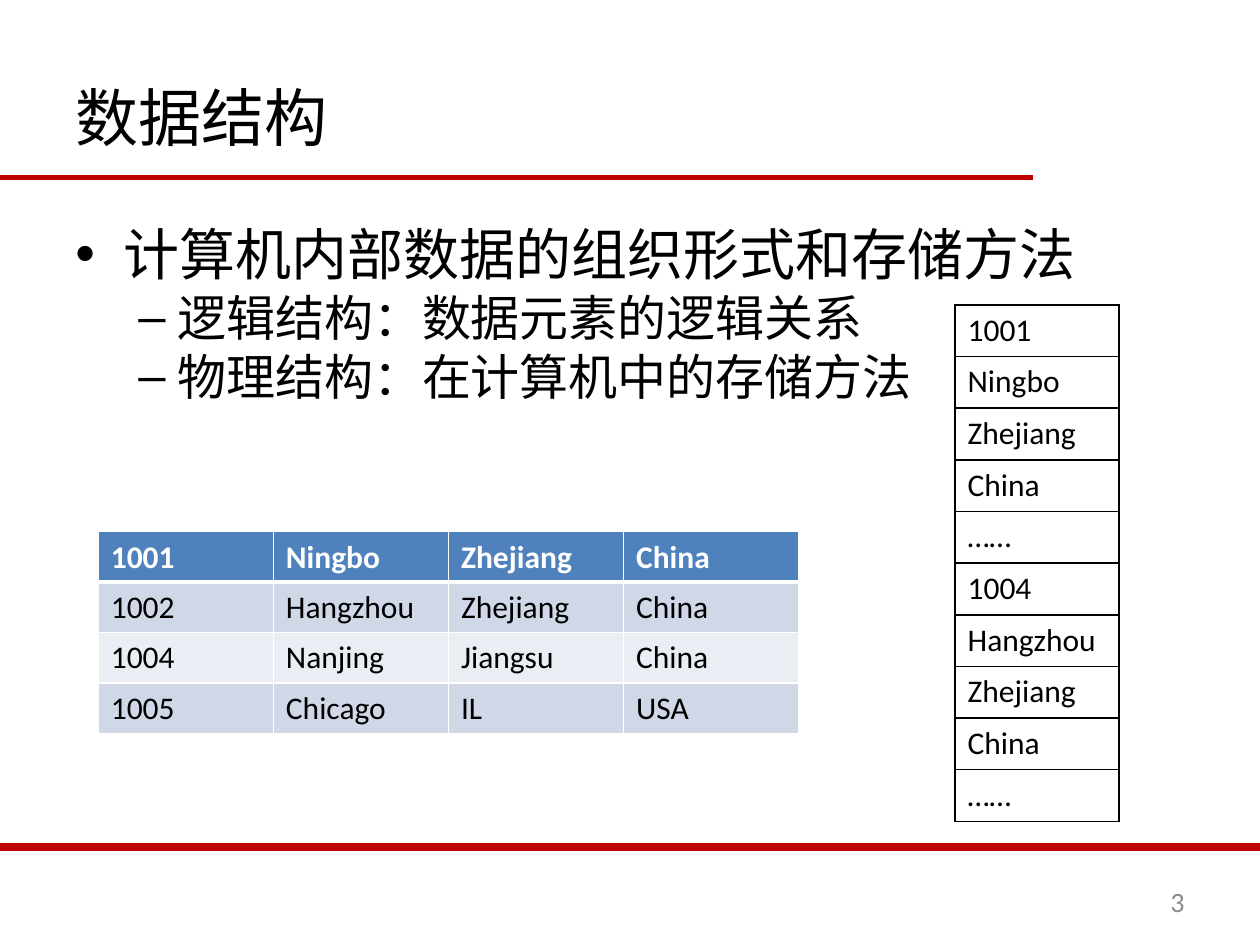
from dataclasses import dataclass

from lxml import etree
from pptx import Presentation
from pptx.dml.color import RGBColor
from pptx.enum.shapes import MSO_CONNECTOR
from pptx.enum.text import MSO_ANCHOR, PP_ALIGN
from pptx.oxml.ns import qn
from pptx.util import Inches, Pt

STRAIGHT = MSO_CONNECTOR.STRAIGHT
TOP, MIDDLE = MSO_ANCHOR.TOP, MSO_ANCHOR.MIDDLE
LEFT, RIGHT = PP_ALIGN.LEFT, PP_ALIGN.RIGHT


@dataclass(frozen=True)
class Theme:
    latin: str = "Calibri"
    cjk: str = "Noto Sans CJK SC"
    black: str = "000000"
    white: str = "FFFFFF"
    red: str = "C00000"
    grey: str = "8C8C8C"
    header: str = "4F81BD"
    bands: tuple = ("D0D8E8", "E9EDF4")
    title: int = 36
    levels: tuple = (32, 28)
    cell: int = 18
    number: int = 16


T = Theme()

# Bullet character, left margin and hanging indent for each level
BULLETS = (("•", 0.38, -0.38), ("–", 0.81, -0.31))
CJK_SPACING = 0.84

BODY = (
    (0, "计算机内部数据的组织形式和存储方法"),
    (1, "逻辑结构：数据元素的逻辑关系"),
    (1, "物理结构：在计算机中的存储方法"),
)
RECORDS = (
    ("1001", "Ningbo", "Zhejiang", "China"),
    ("1002", "Hangzhou", "Zhejiang", "China"),
    ("1004", "Nanjing", "Jiangsu", "China"),
    ("1005", "Chicago", "IL", "USA"),
)
MEMORY = ("1001", "Ningbo", "Zhejiang", "China", "……",
          "1004", "Hangzhou", "Zhejiang", "China", "……")


def add_run(p, text, size, color, font=T.latin, bold=False):
    r = p.add_run()
    r.text = text
    r.font.size = Pt(size)
    r.font.bold = bold
    r.font.color.rgb = RGBColor.from_string(color)
    r.font.name = font
    ea = etree.SubElement(r.font._element, qn("a:ea"))
    ea.set("typeface", T.cjk)


def add_text_box(s, x, y, w, h, anchor=TOP):
    tf = s.shapes.add_textbox(Inches(x), Inches(y), Inches(w), Inches(h)).text_frame
    tf.word_wrap = True
    tf.vertical_anchor = anchor
    return tf


def add_rule(s, y, length, width):
    line = s.shapes.add_connector(STRAIGHT, 0, Inches(y), Inches(length), Inches(y))
    line.line.color.rgb = RGBColor.from_string(T.red)
    line.line.width = Pt(width)
    etree.SubElement(line._element.spPr, qn("a:effectLst"))


def set_bullet(p, level):
    char, margin, indent = BULLETS[level]
    p.level = level
    pPr = p._p.get_or_add_pPr()
    pPr.set("marL", str(Inches(margin)))
    pPr.set("indent", str(Inches(indent)))
    etree.SubElement(pPr, qn("a:buFont")).set("typeface", "Arial")
    etree.SubElement(pPr, qn("a:buChar")).set("char", char)


def add_bullets(s, items):
    tf = add_text_box(s, 0.5, 1.78, 9, 4.92)
    for i, (level, text) in enumerate(items):
        p = tf.add_paragraph() if i else tf.paragraphs[0]
        size = T.levels[level]
        set_bullet(p, level)
        p.line_spacing = CJK_SPACING
        if i:
            p.space_before = Pt(size * 0.2)
        add_run(p, text, size, T.black, T.cjk)


def set_borders(cell, color, bottom=1):
    tcPr = cell._tc.get_or_add_tcPr()
    for side, width in (("L", 1), ("R", 1), ("T", 1), ("B", bottom)):
        ln = etree.SubElement(tcPr, qn(f"a:ln{side}"), w=str(Pt(width)))
        fill = etree.SubElement(ln, qn("a:solidFill"))
        etree.SubElement(fill, qn("a:srgbClr"), val=color)


def add_grid(s, rows, x, y, col_w, row_h, border, fills, header=False):
    n_rows, n_cols = len(rows), len(rows[0])
    table = s.shapes.add_table(n_rows, n_cols, Inches(x), Inches(y),
                               Inches(col_w * n_cols), Inches(row_h * n_rows)).table
    table.first_row = header
    table.horz_banding = False
    for i, values in enumerate(rows):
        is_head = header and i == 0
        for j, value in enumerate(values):
            cell = table.cell(i, j)
            # The rule under the header is heavier, on both sides of the edge
            set_borders(cell, border, bottom=3 if is_head else 1)
            if header and i == 1:
                cell._tc.tcPr.find(qn("a:lnT")).set("w", str(Pt(3)))
            cell.fill.solid()
            cell.fill.fore_color.rgb = RGBColor.from_string(fills[i])
            add_run(cell.text_frame.paragraphs[0], value, T.cell,
                    T.white if is_head else T.black, bold=is_head)


def main():
    prs = Presentation()
    prs.slide_width, prs.slide_height = Inches(10), Inches(7.5)
    s = prs.slides.add_slide(prs.slide_layouts[6])

    # Rules under the title and above the footer
    add_rule(s, 1.41, 8.2, 3)
    add_rule(s, 6.72, 10, 4.5)

    # Title and outline
    tf = add_text_box(s, 0.5, 0.3, 9, 1.25, MIDDLE)
    tf.paragraphs[0].alignment = LEFT
    add_run(tf.paragraphs[0], "数据结构", T.title, T.black, T.cjk)
    add_bullets(s, BODY)

    # Slide number
    tf = add_text_box(s, 7.17, 6.95, 2.33, 0.4, MIDDLE)
    tf.paragraphs[0].alignment = RIGHT
    add_run(tf.paragraphs[0], "3", T.number, T.grey)

    # Logical table and its layout in memory
    bands = [T.bands[i % 2] for i in range(len(RECORDS) - 1)]
    add_grid(s, RECORDS, 0.78, 4.22, 1.39, 0.4, T.white, [T.header] + bands, header=True)
    add_grid(s, [(value,) for value in MEMORY], 7.58, 2.42, 1.3, 0.41,
             T.black, [T.white] * len(MEMORY))

    prs.save("out.pptx")


if __name__ == "__main__":
    main()
